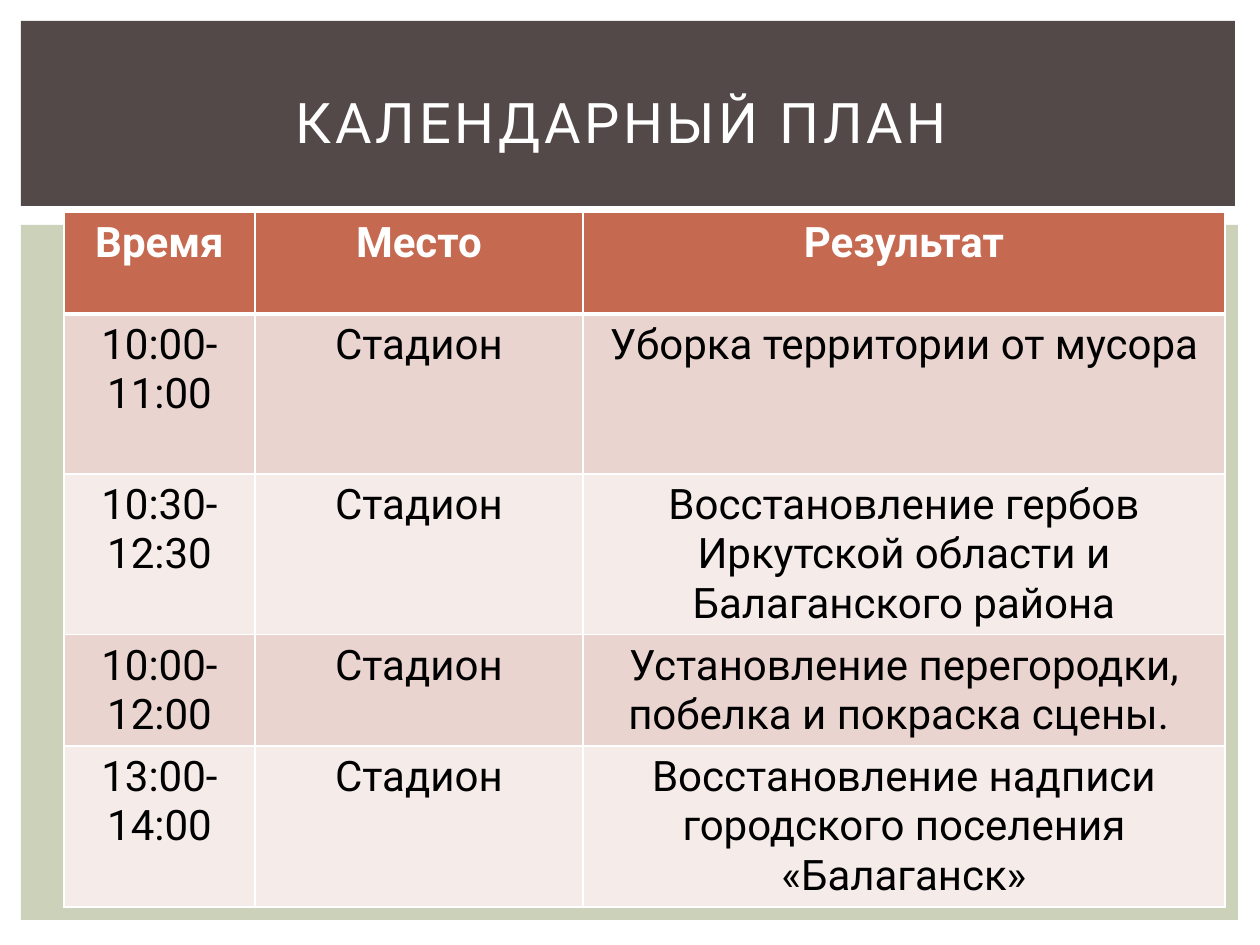
import pptx
import pptx.dml.color
import pptx.enum.shapes
import pptx.enum.text
import pptx.oxml
import pptx.oxml.ns
import pptx.util

EMU_PER_PX = 914400 / 126
FONT = "Roboto"
COLORS = {
    "white": "FFFFFF",
    "black": "000000",
    "backdrop": "CCD1B9",
    "banner": "534949",
    "header": "C66951",
    "odd_row": "EAD4D0",
    "even_row": "F5EBE9",
}
COLUMN_WIDTHS = [191, 328, 642]
ROW_HEIGHTS = [102, 160, 160, 111, 161]
SCHEDULE = [
    ("Время", "Место", "Результат"),
    ("10:00-11:00", "Стадион", "Уборка территории от мусора"),
    ("10:30-12:30", "Стадион",
     "Восстановление гербов Иркутской области и Балаганского района"),
    ("10:00-12:00", "Стадион",
     "Установление перегородки, побелка и покраска сцены. "),
    ("13:00-14:00", "Стадион",
     "Восстановление надписи городского поселения «Балаганск»"),
]


def px(length):
    return pptx.util.Emu(round(length * EMU_PER_PX))


def rgb(name):
    return pptx.dml.color.RGBColor.from_string(COLORS[name])


def format_text(text_frame, size, color, bold=False):
    paragraph = text_frame.paragraphs[0]
    paragraph.alignment = pptx.enum.text.PP_ALIGN.CENTER
    for run in paragraph.runs:
        run.font.name = FONT
        run.font.size = pptx.util.Pt(size)
        run.font.bold = bold
        run.font.color.rgb = rgb(color)


def add_panel(slide, left, top, width, height, color):
    panel = slide.shapes.add_shape(
        pptx.enum.shapes.MSO_SHAPE.RECTANGLE,
        px(left), px(top), px(width), px(height))
    panel.shadow.inherit = False
    panel.fill.solid()
    panel.fill.fore_color.rgb = rgb(color)
    panel.line.fill.background()


def set_borders(cell, top, bottom):
    """Draw white borders; top and bottom widths are in points."""
    properties = cell._tc.get_or_add_tcPr()
    for side, width in (("L", 1), ("R", 1), ("T", top), ("B", bottom)):
        properties.append(pptx.oxml.parse_xml(
            f'<a:ln{side} {pptx.oxml.ns.nsdecls("a")} w="{pptx.util.Pt(width)}">'
            f'<a:solidFill><a:srgbClr val="{COLORS["white"]}"/></a:solidFill>'
            f'</a:ln{side}>'))


def add_schedule(slide, left, top):
    table = slide.shapes.add_table(
        len(ROW_HEIGHTS), len(COLUMN_WIDTHS), px(left), px(top),
        px(sum(COLUMN_WIDTHS)), px(sum(ROW_HEIGHTS))).table
    for column, width in zip(table.columns, COLUMN_WIDTHS):
        column.width = px(width)
    for index, (row, height, entries) in enumerate(
            zip(table.rows, ROW_HEIGHTS, SCHEDULE)):
        row.height = px(height)
        is_header = index == 0
        row_color = "header" if is_header else ("even_row", "odd_row")[index % 2]
        for cell, entry in zip(row.cells, entries):
            set_borders(cell, top=3 if index == 1 else 1,
                        bottom=3 if is_header else 1)
            cell.fill.solid()
            cell.fill.fore_color.rgb = rgb(row_color)
            cell.text_frame.text = entry
            format_text(cell.text_frame, 24,
                        "white" if is_header else "black", is_header)


def place_title(slide, text, left, top, width, height):
    """Fill the title placeholder and bring it in front of the banner."""
    title = slide.shapes.title
    title.left, title.top = px(left), px(top)
    title.width, title.height = px(width), px(height)
    title.text_frame.text = text
    title.text_frame.auto_size = pptx.enum.text.MSO_AUTO_SIZE.NONE
    title.text_frame.vertical_anchor = pptx.enum.text.MSO_ANCHOR.MIDDLE
    format_text(title.text_frame, 32, "white")
    for run in title.text_frame.paragraphs[0].runs:
        run.font._element.set("spc", "200")
    slide.shapes._spTree.append(title._element)


def main():
    presentation = pptx.Presentation()
    presentation.slide_width, presentation.slide_height = px(1260), px(945)
    slide = presentation.slides.add_slide(presentation.slide_layouts[5])
    add_panel(slide, 21, 225, 1217, 695, "backdrop")
    add_panel(slide, 21, 21, 1214, 185, "banner")
    add_schedule(slide, 64, 212)
    place_title(slide, "КАЛЕНДАРНЫЙ ПЛАН ", 53, 49, 1155, 145)
    presentation.save("out.pptx")


if __name__ == "__main__":
    main()
